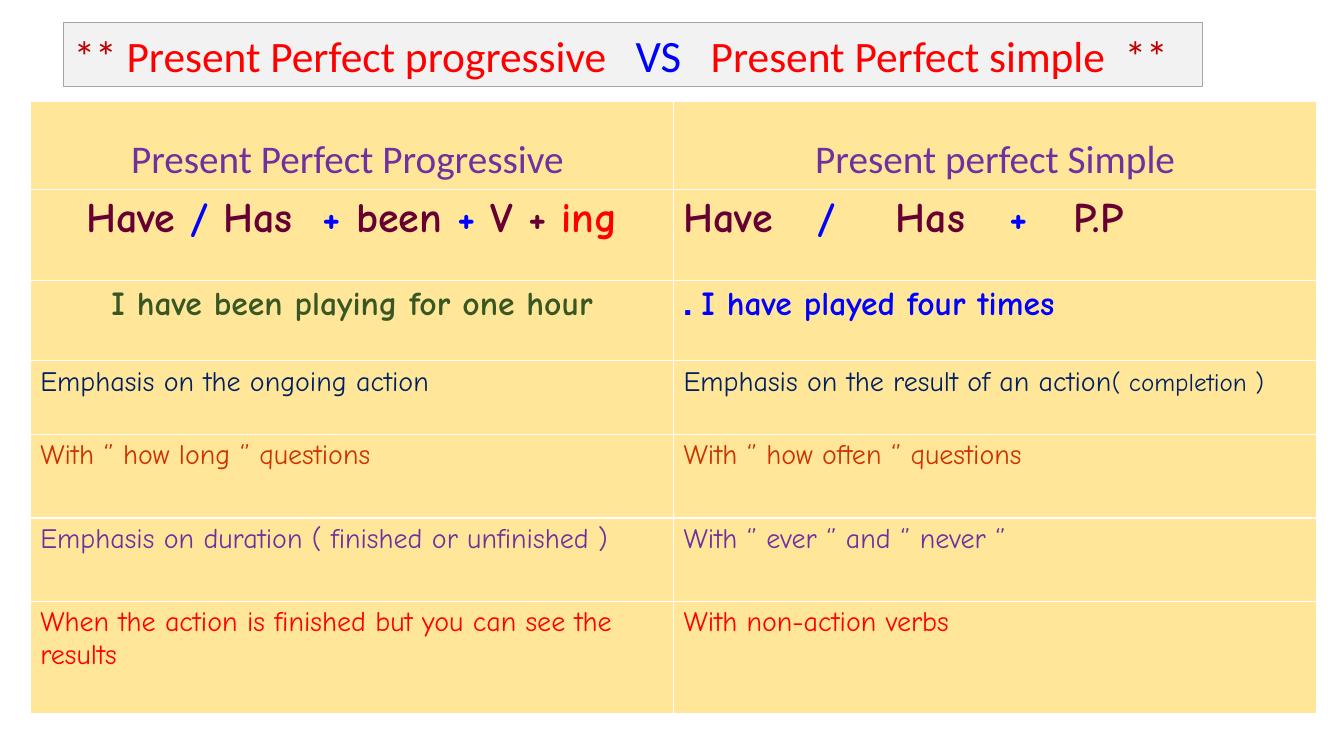
from lxml import etree
from pptx import Presentation
from pptx.dml.color import RGBColor
from pptx.enum.text import MSO_ANCHOR, MSO_AUTO_SIZE, PP_ALIGN
from pptx.oxml.ns import qn
from pptx.util import Inches, Pt

LEFT, CENTER = PP_ALIGN.LEFT, PP_ALIGN.CENTER
TOP, BOTTOM = MSO_ANCHOR.TOP, MSO_ANCHOR.BOTTOM
NO_AUTOFIT = MSO_AUTO_SIZE.NONE

WHITE = RGBColor(0xFF, 0xFF, 0xFF)
PALE_GRAY = RGBColor(0xF2, 0xF2, 0xF2)
GRAY = RGBColor(0xA5, 0xA5, 0xA5)
SAND = RGBColor(0xFF, 0xE6, 0x99)
RED = RGBColor(0xFF, 0x00, 0x00)
DARK_RED = RGBColor(0xC0, 0x00, 0x00)
BLUE = RGBColor(0x00, 0x00, 0xFF)
NAVY = RGBColor(0x00, 0x20, 0x60)
PURPLE = RGBColor(0x70, 0x30, 0xA0)
PLUM = RGBColor(0x66, 0x00, 0x33)
GREEN = RGBColor(0x38, 0x57, 0x23)
RUST = RGBColor(0xCC, 0x33, 0x00)

HEAD_FONT, BODY_FONT = "Calibri", "Comic Neue"

TITLE = [
    ("** ", DARK_RED), ("Present Perfect progressive   ", RED),
    ("VS", BLUE, 32), ("   ", DARK_RED),
    ("Present Perfect simple  ", RED), ("**", DARK_RED),
]

HEADER = dict(size=28, font=HEAD_FONT, align=CENTER)
FORMULA = dict(size=30, bold=True, rtl=True)
EXAMPLE = dict(size=24, bold=True, rtl=True)
USE = dict(size=20)
ROWS = [
    (0.87, HEADER, [("Present Perfect Progressive ", PURPLE)],
     [(" Present perfect Simple ", PURPLE)]),
    (0.9, FORMULA,
     [("Have ", PLUM), ("/", BLUE), (" Has  ", PLUM), ("+", BLUE),
      (" been ", PLUM), ("+ ", BLUE), ("V + ", PLUM), ("ing", RED)],
     [(" Have   ", PLUM), ("/   ", BLUE), (" Has   ", PLUM),
      ("+  ", BLUE), (" P.P", PLUM)]),
    (0.8, EXAMPLE, [("I have been playing for one hour", GREEN)],
     [("I have played four times .", BLUE)]),
    (0.73, USE, [("Emphasis on the ongoing action", NAVY)],
     [("Emphasis on the result of an action", NAVY),
      ("( completion )", NAVY, 18)]),
    (0.83, USE, [("With ‘’ how long ‘’ questions", RUST)],
     [("With ‘’ how often ‘’ questions", RUST)]),
    (0.83, USE, [("Emphasis on duration ( finished or unfinished )", PURPLE)],
     [("With ‘’ ever ‘’ and ‘’ never ‘’", PURPLE)]),
    (1.11, USE,
     [("When the action is finished but you can see the results", RED)],
     [("With non-action verbs", RED)]),
]
COL_WIDTH = 6.38


def write(tf, runs, size, font=BODY_FONT, bold=False, align=LEFT, rtl=False):
    p = tf.paragraphs[0]
    p.alignment = align
    if rtl:
        p._p.get_or_add_pPr().set("rtl", "1")
    for text, color, *own_size in runs:
        r = p.add_run()
        r.text = text
        r.font.size = Pt(own_size[0] if own_size else size)
        r.font.name = font
        r.font.bold = bold
        r.font.color.rgb = color


def add_borders(cell, color):
    tcPr = cell._tc.get_or_add_tcPr()
    for i, side in enumerate(("lnL", "lnR", "lnT", "lnB")):
        ln = etree.Element(qn(f"a:{side}"), w=str(Pt(1)))
        fill = etree.SubElement(ln, qn("a:solidFill"))
        etree.SubElement(fill, qn("a:srgbClr"), val=str(color))
        tcPr.insert(i, ln)


def add_title(s):
    sp = s.shapes.title
    sp.left, sp.top = Inches(0.63), Inches(0.22)
    sp.width, sp.height = Inches(11.3), Inches(0.64)
    sp.fill.solid()
    sp.fill.fore_color.rgb = PALE_GRAY
    sp.line.color.rgb = GRAY
    sp.line.width = Pt(0.5)
    tf = sp.text_frame
    tf.word_wrap = True
    tf.auto_size = NO_AUTOFIT
    tf.vertical_anchor = TOP
    write(tf, TITLE, 31, font=HEAD_FONT)


def add_comparison(s):
    height = sum(row[0] for row in ROWS)
    table = s.shapes.add_table(len(ROWS), 2, Inches(0.3), Inches(1.01),
                               Inches(2 * COL_WIDTH), Inches(height)).table
    table.first_row = table.horz_banding = False
    for column in table.columns:
        column.width = Inches(COL_WIDTH)
    for i, (row_height, style, *sides) in enumerate(ROWS):
        table.rows[i].height = Inches(row_height)
        for j, runs in enumerate(sides):
            cell = table.cell(i, j)
            cell.fill.solid()
            cell.fill.fore_color.rgb = SAND
            cell.vertical_anchor = BOTTOM if style is HEADER else TOP
            add_borders(cell, WHITE)
            centered = style is HEADER or (j == 0 and style is not USE)
            write(cell.text_frame, runs,
                  **{**style, "align": CENTER if centered else LEFT})


def main():
    prs = Presentation()
    prs.slide_width, prs.slide_height = Inches(13.33), Inches(7.5)
    s = prs.slides.add_slide(prs.slide_layouts[5])
    add_title(s)
    add_comparison(s)
    prs.save("out.pptx")


if __name__ == "__main__":
    main()
